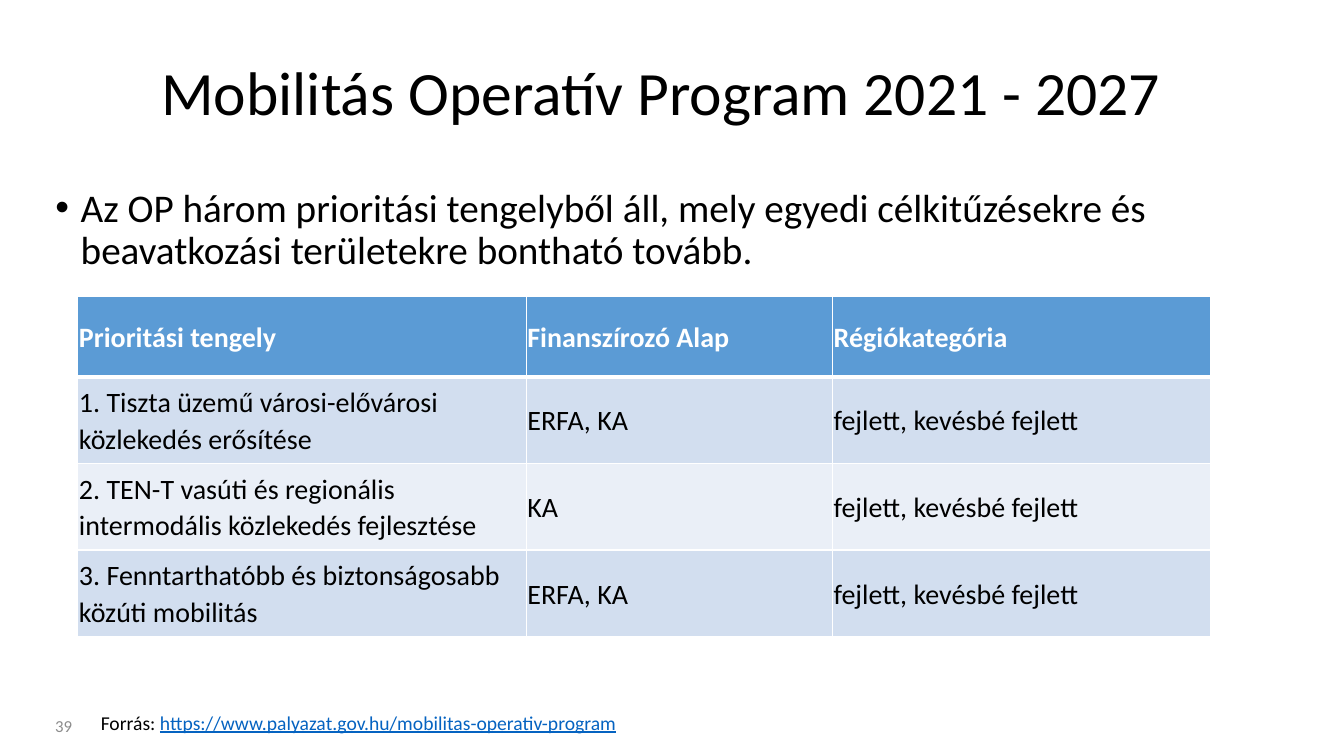
"""Builds the slide on the priority axes of the 2021–2027 mobility programme."""
from dataclasses import dataclass

from lxml import etree
from pptx import Presentation
from pptx import util as u
from pptx.dml.color import RGBColor
from pptx.enum import text
from pptx.oxml.ns import qn

FONT = "Calibri"
BLACK, WHITE, GREY, LINK = "000000", "FFFFFF", "8C8C8C", "0563C1"
HEADER, BANDS = "5B9BD5", ("D2DEEF", "EAEFF7")


@dataclass
class Area:
    left: float
    top: float
    width: float
    height: float

    def lengths(self) -> tuple:
        return u.Cm(self.left), u.Cm(self.top), u.Cm(self.width), u.Cm(self.height)


@dataclass
class Axis:
    name: str
    fund: str
    regions: str = "fejlett, kevésbé fejlett"


HEADINGS = Axis("Prioritási tengely", "Finanszírozó Alap", "Régiókategória")
AXES = [
    Axis("1. Tiszta üzemű városi-elővárosi közlekedés erősítése", "ERFA, KA"),
    Axis("2. TEN-T vasúti és regionális intermodális közlekedés fejlesztése", "KA"),
    Axis("3. Fenntarthatóbb és biztonságosabb közúti mobilitás", "ERFA, KA"),
]
COLUMN_WIDTHS = (11.3, 7.72, 9.53)
HEADER_HEIGHT, ROW_HEIGHT = 2.03, 2.18


def paint(target, color: str) -> None:
    target.rgb = RGBColor.from_string(color)


def style(span, size: float, color: str, bold: bool = False) -> None:
    span.font.name, span.font.size, span.font.bold = FONT, u.Pt(size), bold
    paint(span.font.color, color)


def fill_placeholder(box, area: Area, wording: str, size: float, anchor):
    box.left, box.top, box.width, box.height = area.lengths()
    frame = box.text_frame
    frame.text = wording
    frame.word_wrap, frame.auto_size = True, text.MSO_AUTO_SIZE.NONE
    frame.vertical_anchor = anchor
    para = frame.paragraphs[0]
    para.alignment = text.PP_ALIGN.LEFT
    para.line_spacing, para.space_before = 0.9, u.Pt(0)
    style(para.runs[0], size, BLACK)
    return para


def add_bullet(para) -> None:
    properties = para._p.get_or_add_pPr()
    properties.set("marL", str(u.Cm(0.64)))
    properties.set("indent", str(-u.Cm(0.64)))
    etree.SubElement(properties, qn("a:buFont")).set("typeface", "Arial")
    etree.SubElement(properties, qn("a:buChar")).set("char", "•")


def add_label(page, area: Area, wording: str, size: float, color: str, anchor):
    frame = page.shapes.add_textbox(*area.lengths()).text_frame
    frame.word_wrap, frame.vertical_anchor = True, anchor
    para = frame.paragraphs[0]
    para.text = wording
    style(para.runs[0], size, color)
    return para


def add_borders(cell, top: float, bottom: float) -> None:
    properties = cell._tc.get_or_add_tcPr()
    for side, width in (("L", 1), ("R", 1), ("T", top), ("B", bottom)):
        line = etree.SubElement(properties, qn(f"a:ln{side}"), w=str(u.Pt(width)))
        solid = etree.SubElement(line, qn("a:solidFill"))
        etree.SubElement(solid, qn("a:srgbClr")).set("val", WHITE)


def fill_cell(cell, wording: str, row: int) -> None:
    is_header = row == 0
    add_borders(cell, 3 if row == 1 else 1, 3 if is_header else 1)
    cell.fill.solid()
    paint(cell.fill.fore_color, HEADER if is_header else BANDS[(row - 1) % 2])
    cell.margin_left = cell.margin_right = u.Cm(0.03)
    cell.margin_top = cell.margin_bottom = u.Cm(0.03)
    cell.vertical_anchor = text.MSO_ANCHOR.MIDDLE
    para = cell.text_frame.paragraphs[0]
    para.text = wording
    para.line_spacing, para.space_after = 1.07, u.Pt(8)
    style(para.runs[0], 20, WHITE if is_header else BLACK, is_header)


def add_axes_table(page) -> None:
    entries = [HEADINGS, *AXES]
    height = HEADER_HEIGHT + ROW_HEIGHT * len(AXES)
    area = Area(1.96, 7.47, sum(COLUMN_WIDTHS), height)
    table = page.shapes.add_table(len(entries), len(COLUMN_WIDTHS), *area.lengths()).table
    for column, width in zip(table.columns, COLUMN_WIDTHS):
        column.width = u.Cm(width)
    for row, axis in enumerate(entries):
        table.rows[row].height = u.Cm(ROW_HEIGHT if row else HEADER_HEIGHT)
        for column, wording in enumerate((axis.name, axis.fund, axis.regions)):
            fill_cell(table.cell(row, column), wording, row)


def add_source(page) -> None:
    para = add_label(page, Area(2.29, 17.78, 14.05, 0.86), "Forrás: ", 14, BLACK,
                     text.MSO_ANCHOR.TOP)
    address = para.add_run()
    address.text = "https://www.palyazat.gov.hu/mobilitas-operativ-program"
    style(address, 14, LINK)
    address.font.underline = True


def main() -> None:
    deck = Presentation()
    deck.slide_width, deck.slide_height = u.Cm(33.87), u.Cm(19.05)
    page = deck.slides.add_slide(deck.slide_layouts[1])
    fill_placeholder(page.shapes.title, Area(3.81, 1.02, 27.74, 2.79),
                     "Mobilitás Operatív Program 2021 - 2027", 44, text.MSO_ANCHOR.MIDDLE)
    statement = fill_placeholder(
        page.placeholders[1], Area(1.14, 4.62, 30.4, 12.22),
        "Az OP három prioritási tengelyből áll, mely egyedi célkitűzésekre és "
        "beavatkozási területekre bontható tovább.", 28, text.MSO_ANCHOR.TOP)
    add_bullet(statement)
    add_axes_table(page)
    add_source(page)
    add_label(page, Area(1.14, 17.78, 7.62, 1.02), "39", 12, GREY, text.MSO_ANCHOR.MIDDLE)
    deck.save("out.pptx")


if __name__ == "__main__":
    main()
